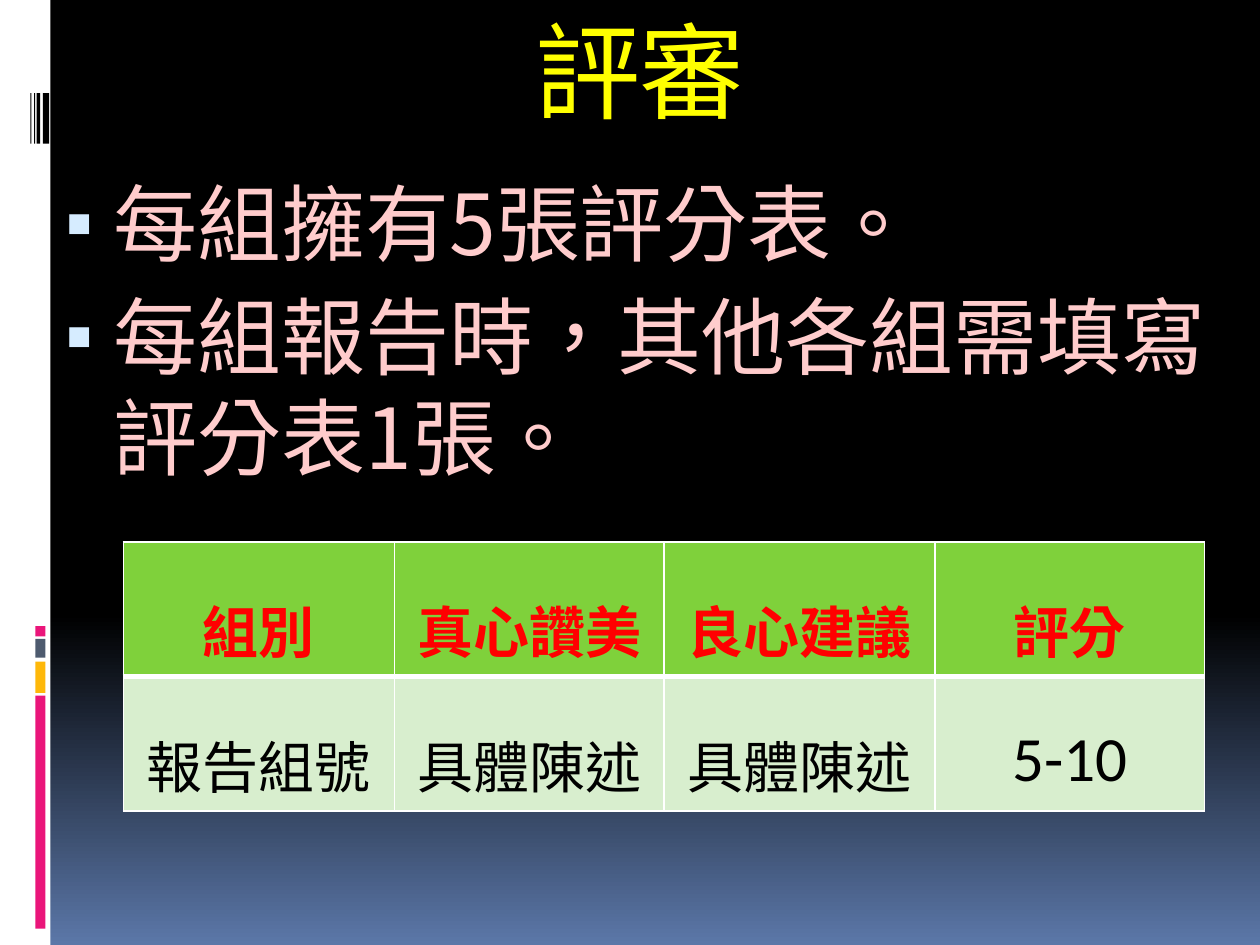
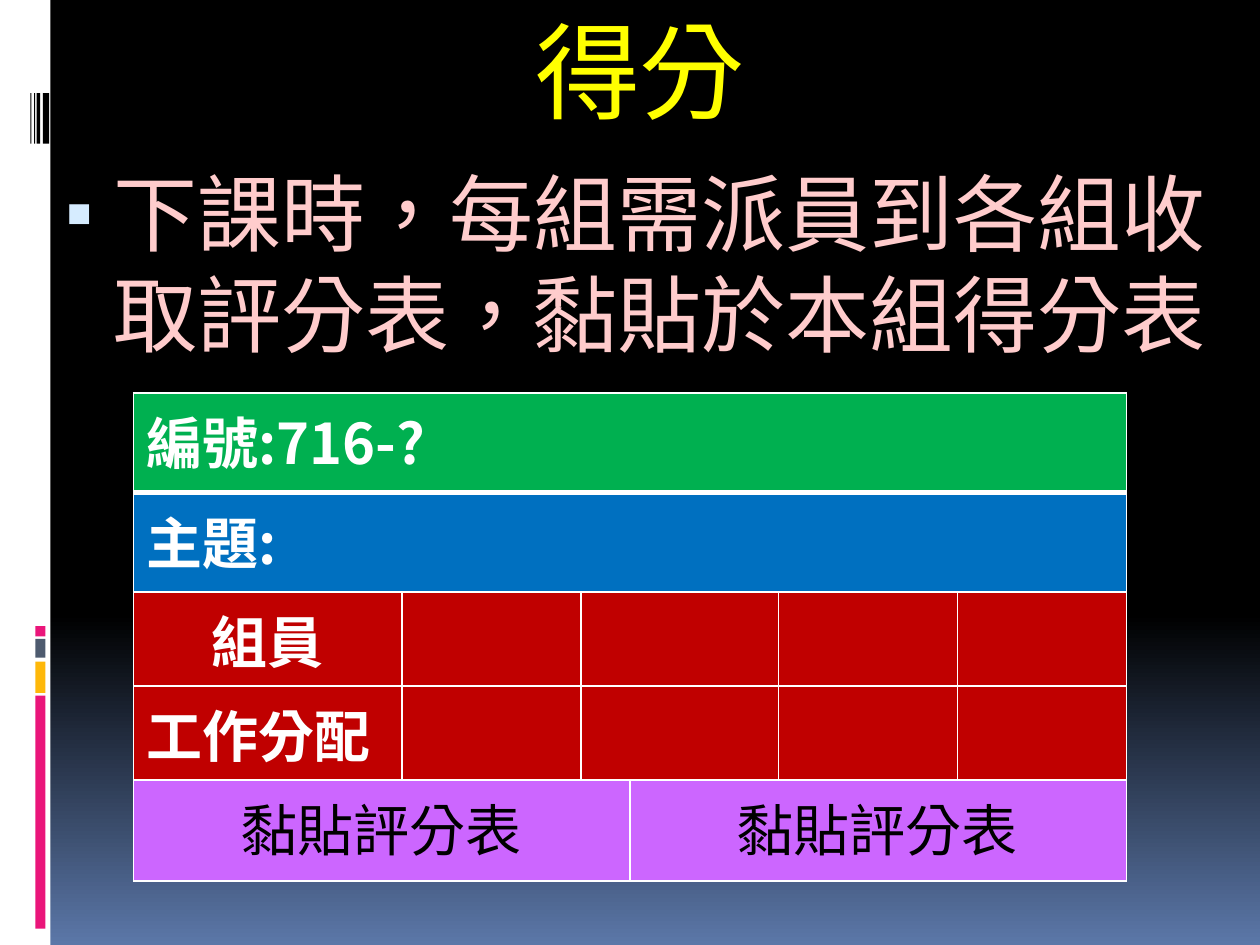
from copy import deepcopy

from pptx import Presentation
from pptx import util as u
from pptx.dml.color import RGBColor
from pptx.enum import shapes, text
from pptx.oxml import parse_xml
from pptx.oxml.ns import nsdecls, qn

PX = 9144  # EMU per px, 100 px to the inch
FONT = "Noto Sans CJK SC"
INK = {
    "white": "FFFFFF", "black": "000000", "dusk": "5B77A8",
    "pink": "EA157A", "gold": "FEB80A", "slate": "4E5B6F",
    "title": "FFFF00", "body": "FFCCCC", "bullet": "D6ECFF",
    "lime": "7FD13B", "mint": "D8EECE", "alert": "FF0000",
    "green": "00B050", "blue": "0070C0", "red": "C00000", "violet": "CC66FF",
}
# Side decoration: left, top, width, height, colour
BARS = [
    (0, 0, 40, 750, "white"),
    (28, 552, 8, 185, "pink"),
    (28, 525, 8, 25, "gold"),
    (28, 507, 8, 15, "slate"),
    (28, 497, 8, 8, "pink"),
] + [(x, 74, w, 40, "black") for x, w in ((34, 5), (29, 3), (27, 1), (24, 1))]


def rgb(name):
    return RGBColor.from_string(INK[name])


def xml(tag, inner="", **attrs):
    """Make one drawing element."""
    pairs = " ".join(f'{key}="{val}"' for key, val in attrs.items())
    return parse_xml(f'<a:{tag} {nsdecls("a")} {pairs}>{inner}</a:{tag}>')


def solid(name):
    return f'<a:solidFill><a:srgbClr val="{INK[name]}"/></a:solidFill>'


def write(par, words, size=32, ink="white", bold=False, font=FONT,
          align=None, line=None, before=None, track=None, edge=None):
    """Put one formatted run into a paragraph."""
    par.alignment = align
    if line:
        par.line_spacing = line
    if before is not None:
        par.space_before = u.Pt(before)
    run = par.add_run()
    run.text = words
    run.font.size = u.Pt(size)
    run.font.bold = bold
    run.font.color.rgb = rgb(ink)
    run.font.name = font
    props = run.font._element
    props.set("lang", "zh-TW")
    props.find(qn("a:latin")).addnext(xml("ea", typeface=font))
    if track:
        props.set("spc", str(track * 100))
    if edge:
        props.insert(0, xml("ln", solid(edge), w=u.Pt(0.75)))


def place(shape, left, top, width, height):
    shape.left, shape.top = left * PX, top * PX
    shape.width, shape.height = width * PX, height * PX


def bullet(par):
    """Give a paragraph the square bullet and hanging indent."""
    props = par._p.get_or_add_pPr()
    props.set("marL", str(45 * PX))
    props.set("indent", str(-38 * PX))
    props.append(xml("buClr", f'<a:srgbClr val="{INK["bullet"]}"/>'))
    props.append(xml("buSzPct", val=95000))
    props.append(xml("buChar", char="▪"))


def backdrop(layout):
    """Black to blue gradient, dark down to 65 percent."""
    fill = layout.background.fill
    fill.gradient()
    fill.gradient_angle = 270
    first = layout.element.find(".//" + qn("a:gsLst"))[0]
    first.addnext(deepcopy(first))
    stops = ((0, "black"), (0.65, "black"), (1, "dusk"))
    for stop, (pos, ink) in zip(fill.gradient_stops, stops):
        stop.position = pos
        stop.color.rgb = rgb(ink)


def side(slide, layout):
    """Draw the side bars and move them to the shared layout."""
    for spot, (left, top, width, height, ink) in enumerate(BARS, 2):
        bar = slide.shapes.add_shape(
            shapes.MSO_SHAPE.RECTANGLE,
            left * PX, top * PX, width * PX, height * PX)
        bar.shadow.inherit = False
        bar.fill.solid()
        bar.fill.fore_color.rgb = rgb(ink)
        bar.line.fill.background()
        layout.shapes.element.insert(spot, bar.element)


def page(deck, layout, title, items, box):
    """Add a slide with its title and bulleted list."""
    slide = deck.slides.add_slide(layout)
    head, body = slide.shapes.title, slide.placeholders[1]
    place(head, 83, 0, 850, 100)
    place(body, *box)
    for shape in (head, body):
        shape.text_frame.auto_size = text.MSO_AUTO_SIZE.NONE
        shape.text_frame.vertical_anchor = text.MSO_ANCHOR.TOP
    write(head.text_frame.paragraphs[0], title, size=60, ink="title",
          align=text.PP_ALIGN.CENTER, track=-1)
    frame = body.text_frame
    for num, item in enumerate(items):
        par = frame.add_paragraph() if num else frame.paragraphs[0]
        write(par, item, size=48, ink="body", before=7)
        bullet(par)
    return slide


def grid(slide, left, top, cols, rows, fills):
    """Add a table with one fill per row and a thick rule under row one."""
    table = slide.shapes.add_table(
        len(rows), len(cols), left * PX, top * PX,
        sum(cols) * PX, sum(rows) * PX).table
    for col, width in zip(table.columns, cols):
        col.width = width * PX
    for num, (row, height) in enumerate(zip(table.rows, rows)):
        row.height = height * PX
        for cell in row.cells:
            cell.fill.solid()
            cell.fill.fore_color.rgb = rgb(fills[num])
            thick = {"lnB": 3} if num == 0 else {"lnT": 3} if num == 1 else {}
            props = cell._tc.get_or_add_tcPr()
            for spot, edge in enumerate(("lnL", "lnR", "lnT", "lnB")):
                width = u.Pt(thick.get(edge, 1))
                props.insert(spot, xml(edge, solid("white"), w=width))
    return table


def put(table, row, col, words, **form):
    write(table.cell(row, col).text_frame.paragraphs[0], words, **form)


def review(slide):
    """Sample of the scoring form."""
    table = grid(slide, 98, 430, [215, 214] * 2, [102] * 2, ["lime", "mint"])
    form = {"align": text.PP_ALIGN.CENTER, "line": 1.5}
    for col, words in enumerate(("組別", "真心讚美", "良心建議", "評分")):
        put(table, 0, col, words, ink="alert", bold=True, **form)
    for col, words in enumerate(("報告組號", "具體陳述", "具體陳述")):
        put(table, 1, col, words, ink="black", **form)
    put(table, 1, 3, "5-10", size=36, font="Calibri", ink="black", **form)


def score(slide):
    """Sheet on which a group pastes its scoring forms."""
    table = grid(slide, 106, 312, [213, 142, 39, 118, 142, 134],
                 [79, 79, 74, 74, 80],
                 ["green", "blue", "red", "red", "violet"])
    spans = [(0, 0, 5), (1, 0, 5), (2, 2, 3), (3, 2, 3), (4, 0, 2), (4, 3, 5)]
    for row, start, end in spans:
        table.cell(row, start).merge(table.cell(row, end))
    mid = text.PP_ALIGN.CENTER
    labels = (("編號:716-?", None), ("主題:", None),
              ("組員", mid), ("工作分配", None))
    for row, (words, align) in enumerate(labels):
        put(table, row, 0, words, bold=True, align=align)
    for col in (0, 3):
        put(table, 4, col, "黏貼評分表", ink="black", align=mid, edge="black")


def main():
    deck = Presentation()
    deck.slide_width, deck.slide_height = 1000 * PX, 750 * PX
    layout = deck.slide_layouts[1]
    backdrop(layout)

    first = page(deck, layout, "評審",
                 ["每組擁有5張評分表。",
                  "每組報告時，其他各組需填寫評分表1張。"],
                 (35, 131, 965, 619))
    side(first, layout)
    review(first)

    second = page(deck, layout, "得分",
                  ["下課時，每組需派員到各組收取評分表，黏貼於本組得分表"],
                  (35, 123, 965, 189))
    score(second)
    deck.save("out.pptx")


if __name__ == "__main__":
    main()
